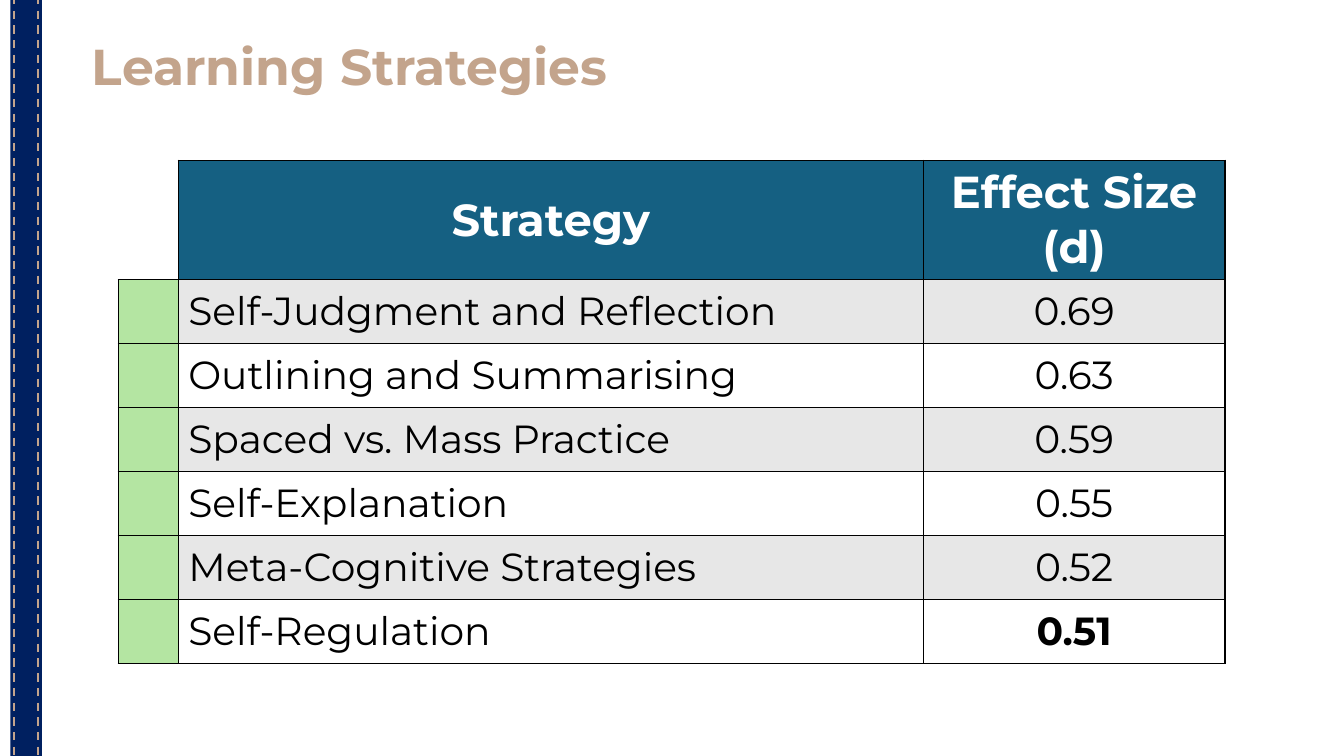
import pptx
import pptx.util
import pptx.dml.color
import pptx.enum.dml
import pptx.enum.shapes
import pptx.enum.text
import pptx.oxml
import pptx.oxml.ns
from lxml import etree

Pt = pptx.util.Pt
RGBColor = pptx.dml.color.RGBColor
Align = pptx.enum.text.PP_ALIGN
Anchor = pptx.enum.text.MSO_ANCHOR
qn = pptx.oxml.ns.qn

TITLE = "Learning Strategies"
HEADERS = ("Strategy", "Effect Size (d)")
STRATEGIES = [
    ("Self-Judgment and Reflection", "0.69"),
    ("Outlining and Summarising", "0.63"),
    ("Spaced vs. Mass Practice", "0.59"),
    ("Self-Explanation", "0.55"),
    ("Meta-Cognitive Strategies", "0.52"),
    ("Self-Regulation", "0.51"),
]
BOLD_VALUE = "0.51"

FONT = "Montserrat"
NAVY = RGBColor(0x00, 0x20, 0x60)
TAN = RGBColor(0xC3, 0xA4, 0x8C)
TEAL = RGBColor(0x15, 0x60, 0x82)
GREEN = RGBColor(0xB4, 0xE5, 0xA2)
GREY = RGBColor(0xE7, 0xE7, 0xE7)
WHITE = RGBColor(0xFF, 0xFF, 0xFF)
BLACK = RGBColor(0x00, 0x00, 0x00)

COLUMN_WIDTHS = (42.9, 532.2, 215.4)
HEADER_HEIGHT = 85.3
ROW_HEIGHT = 45.7
STITCH_POSITIONS = (10.2, 27.3)


def add_text(text_frame, text, size, color, bold, align):
    paragraph = text_frame.paragraphs[0]
    paragraph.alignment = align
    run = paragraph.add_run()
    run.text = text
    run.font.name = FONT
    run.font.size = Pt(size)
    run.font.bold = bold
    run.font.color.rgb = color
    return paragraph


def set_borders(cell, visible):
    properties = cell._tc.get_or_add_tcPr()
    for index, side in enumerate("LRTB"):
        border = pptx.oxml.parse_xml(
            f'<a:ln{side} xmlns:a="http://schemas.openxmlformats.org/drawingml/2006/main" w="12700">'
            + (f'<a:solidFill><a:srgbClr val="{BLACK}"/></a:solidFill>' if side in visible else "<a:noFill/>")
            + f"</a:ln{side}>"
        )
        properties.insert(index, border)


def fill_cell(cell, color):
    cell.fill.solid()
    cell.fill.fore_color.rgb = color
    cell.vertical_anchor = Anchor.MIDDLE
    set_borders(cell, "LRTB")


def add_ribbon(slide):
    ribbon = slide.shapes.add_shape(
        pptx.enum.shapes.MSO_SHAPE.RECTANGLE, Pt(7.4), Pt(-0.5), Pt(22.5), Pt(540.7)
    )
    ribbon.shadow.inherit = False
    ribbon.fill.solid()
    ribbon.fill.fore_color.rgb = NAVY
    ribbon.line.fill.background()
    for x in STITCH_POSITIONS:
        stitch = slide.shapes.add_connector(
            pptx.enum.shapes.MSO_CONNECTOR.STRAIGHT, Pt(x), Pt(-3), Pt(x), Pt(542)
        )
        stitch.line.color.rgb = TAN
        stitch.line.width = Pt(1.5)
        stitch.line.dash_style = pptx.enum.dml.MSO_LINE.DASH
        etree.SubElement(stitch._element.spPr, qn("a:effectLst"))


def add_title(slide):
    title = slide.shapes.title
    title.left, title.top, title.width, title.height = Pt(58.5), Pt(26.6), Pt(838), Pt(58.3)
    title.text_frame.word_wrap = True
    title.text_frame.vertical_anchor = Anchor.TOP
    paragraph = add_text(title.text_frame, TITLE, 36, TAN, True, Align.LEFT)
    paragraph.line_spacing = 0.9


def add_strategy_table(slide):
    height = HEADER_HEIGHT + ROW_HEIGHT * len(STRATEGIES)
    table = slide.shapes.add_table(
        len(STRATEGIES) + 1, len(COLUMN_WIDTHS),
        Pt(84.5), Pt(114.5), Pt(sum(COLUMN_WIDTHS)), Pt(height),
    ).table
    table.first_row = False
    table.horz_banding = False
    for column, width in zip(table.columns, COLUMN_WIDTHS):
        column.width = Pt(width)
    for index, row in enumerate(table.rows):
        row.height = Pt(ROW_HEIGHT if index else HEADER_HEIGHT)

    corner = table.cell(0, 0)
    corner.fill.background()
    set_borders(corner, "RB")
    for column, header in enumerate(HEADERS, 1):
        cell = table.cell(0, column)
        fill_cell(cell, TEAL)
        add_text(cell.text_frame, header, 32, WHITE, True, Align.CENTER)

    for row, strategy in enumerate(STRATEGIES, 1):
        fill_cell(table.cell(row, 0), GREEN)
        for column, (text, align) in enumerate(zip(strategy, (Align.LEFT, Align.CENTER)), 1):
            cell = table.cell(row, column)
            fill_cell(cell, GREY if row % 2 else WHITE)
            add_text(cell.text_frame, text, 28, BLACK, text == BOLD_VALUE, align)


def main():
    presentation = pptx.Presentation()
    presentation.slide_width = Pt(960)
    presentation.slide_height = Pt(540)
    slide = presentation.slides.add_slide(presentation.slide_layouts[5])
    add_ribbon(slide)
    add_title(slide)
    add_strategy_table(slide)
    presentation.save("out.pptx")


if __name__ == "__main__":
    main()
